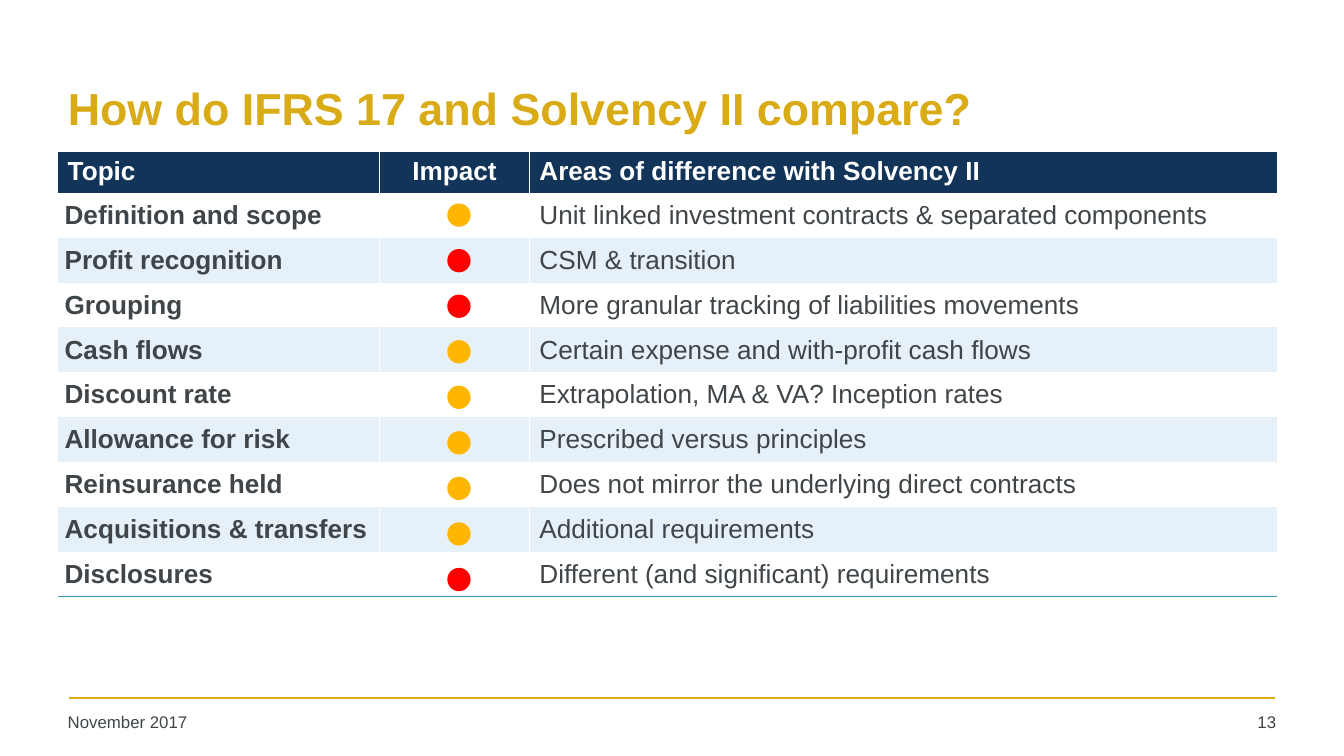
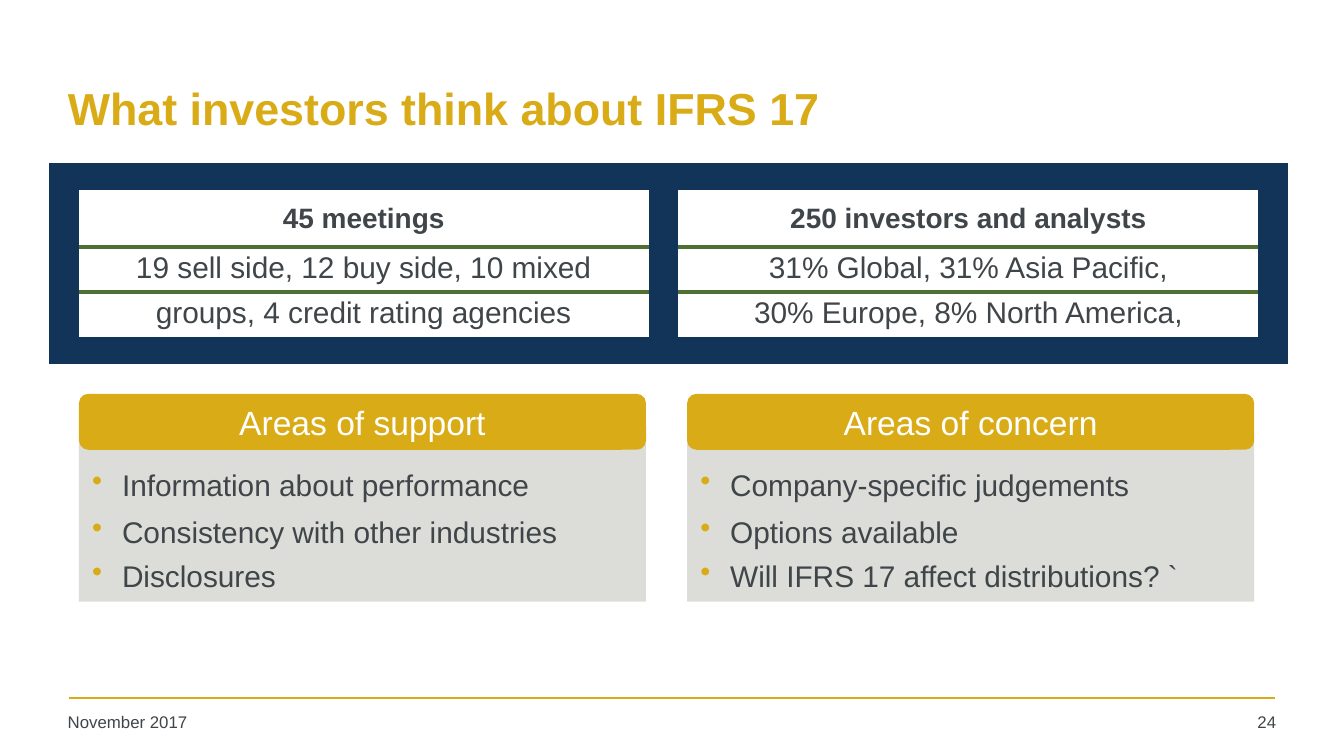
"""Build two slides on IFRS 17: a comparison with Solvency II and investor views."""
from dataclasses import dataclass

from lxml.etree import SubElement
from pptx import Presentation
from pptx.dml.color import RGBColor
from pptx.enum.shapes import MSO_CONNECTOR as Connector, MSO_SHAPE as Preset
from pptx.enum.text import MSO_ANCHOR as Anchor, MSO_AUTO_SIZE as AutoSize, PP_ALIGN as Align
from pptx.oxml.ns import qn
from pptx.util import Pt


@dataclass(frozen=True)
class Theme:
    font: str = "Arial"
    gold: RGBColor = RGBColor(0xD9, 0xAB, 0x16)
    navy: RGBColor = RGBColor(0x11, 0x34, 0x58)
    ink: RGBColor = RGBColor(0x3F, 0x45, 0x48)
    white: RGBColor = RGBColor(0xFF, 0xFF, 0xFF)
    pale: RGBColor = RGBColor(0xE5, 0xF0, 0xF9)
    grey: RGBColor = RGBColor(0xDC, 0xDD, 0xD9)
    blue: RGBColor = RGBColor(0x40, 0x96, 0xB8)
    green: RGBColor = RGBColor(0x4F, 0x70, 0x33)
    amber: RGBColor = RGBColor(0xFF, 0xB6, 0x00)
    red: RGBColor = RGBColor(0xFF, 0x00, 0x00)
    title: float = 24
    heading: float = 18
    body: float = 16
    figure: float = 15
    table: float = 14
    footer: float = 9
    tiny: float = 6


theme = Theme()
NO_TABLE_STYLE = "{2D5ABB26-0587-4C30-8999-92F81FD0307C}"


def write(holder, text, size=theme.body, color=theme.ink, bold=False, align=Align.LEFT,
          anchor=Anchor.TOP, margins=(5.3, 2.65, 5.3, 2.65), gaps=(0,), bullet=None):
    """Write the lines of text into a text frame or table cell."""
    holder.margin_left, holder.margin_top, holder.margin_right, holder.margin_bottom = map(Pt, margins)
    holder.vertical_anchor = anchor
    frame = getattr(holder, "text_frame", holder)
    frame.word_wrap = True
    for index, line in enumerate(text.split("\n")):
        para = frame.add_paragraph() if index else frame.paragraphs[0]
        para.alignment = align
        para.space_before = Pt(gaps[index])
        if not line:
            SubElement(para._p, qn("a:endParaRPr"), sz=str(int(size * 100)))
            continue
        if bullet:
            properties = para._p.get_or_add_pPr()
            properties.set("marL", str(Pt(16)))
            properties.set("indent", str(Pt(-16)))
            bullet_color = SubElement(properties, qn("a:buClr"))
            SubElement(bullet_color, qn("a:srgbClr"), val=str(theme.gold))
            SubElement(properties, qn("a:buChar"), char=bullet)
        span = para.add_run()
        span.text = line
        span.font.name, span.font.size, span.font.bold = theme.font, Pt(size), bold
        span.font.color.rgb = color


def paint_cell(cell, fill, borders):
    """Draw borders given as (side, color, width), then fill the cell."""
    properties = cell._tc.get_or_add_tcPr()
    for side, color, width in borders:
        line = SubElement(properties, qn(f"a:ln{side}"), w=str(Pt(width)))
        SubElement(SubElement(line, qn("a:solidFill")), qn("a:srgbClr"), val=str(color))
    cell.fill.solid()
    cell.fill.fore_color.rgb = fill


deck = Presentation()
deck.slide_width, deck.slide_height = Pt(720), Pt(405)
pages = []
for title, number in (("How do IFRS 17 and Solvency II compare?", "13"),
                      ("What investors think about IFRS 17", "24")):
    page = deck.slides.add_slide(deck.slide_layouts[5])
    heading = page.shapes.title
    heading.left, heading.top, heading.width, heading.height = Pt(31), Pt(24), Pt(653), Pt(67.5)
    heading.text_frame.auto_size = AutoSize.NONE
    write(heading.text_frame, title, size=theme.title, color=theme.gold, bold=True, anchor=Anchor.MIDDLE)
    rule = page.shapes.add_connector(Connector.STRAIGHT, Pt(36.8), Pt(373.8), Pt(683.2), Pt(373.8))
    rule.line.color.rgb, rule.line.width = theme.gold, Pt(1)
    SubElement(rule._element.spPr, qn("a:effectLst"))
    for left, width, text, align in ((31, 158, "November 2017", Align.LEFT),
                                     (637.9, 51, number, Align.RIGHT)):
        box = page.shapes.add_textbox(Pt(left), Pt(378.5), Pt(width), Pt(20))
        write(box.text_frame, text, size=theme.footer, align=align)
    pages.append(page)
comparison, investors = pages

topics = (
    ("Definition and scope", theme.amber, "Unit linked investment contracts & separated components"),
    ("Profit recognition", theme.red, "CSM & transition"),
    ("Grouping", theme.red, "More granular tracking of liabilities movements"),
    ("Cash flows", theme.amber, "Certain expense and with-profit cash flows"),
    ("Discount rate", theme.amber, "Extrapolation, MA & VA? Inception rates"),
    ("Allowance for risk", theme.amber, "Prescribed versus principles"),
    ("Reinsurance held", theme.amber, "Does not mirror the underlying direct contracts"),
    ("Acquisitions & transfers", theme.amber, "Additional requirements"),
    ("Disclosures", theme.red, "Different (and significant) requirements"),
)
graphic = comparison.shapes.add_table(len(topics) + 1, 3, Pt(31), Pt(81.2), Pt(653), Pt(232.6))
table = graphic.table
graphic._element.find(".//" + qn("a:tableStyleId")).text = NO_TABLE_STYLE
for column, width in zip(table.columns, (172.3, 80.4, 400.3)):
    column.width = Pt(width)
rows = [("Topic", "Impact", "Areas of difference with Solvency II")]
rows += [(topic, "", difference) for topic, impact, difference in topics]
for row, texts in enumerate(rows):
    table.rows[row].height = Pt(23.45 if row else 21.5)
    fill = (theme.pale if row % 2 == 0 else theme.white) if row else theme.navy
    for column, text in enumerate(texts):
        cell = table.cell(row, column)
        write(cell, text, size=theme.table, color=theme.ink if row else theme.white,
              bold=row == 0 or column == 0, align=Align.CENTER if column == 1 else Align.LEFT,
              anchor=Anchor.MIDDLE if row else Anchor.TOP,
              margins=(3.6,) * 4 if row and column == 0 else (5.3, 2.65, 5.3, 2.65))
        borders = [("L", theme.white, 1)] if column else []
        if column < 2:
            borders.append(("R", theme.white, 1))
        if row == len(topics):
            borders.append(("B", theme.blue, 1))
        paint_cell(cell, fill, borders)
for index, (topic, impact, difference) in enumerate(topics):
    dot = comparison.shapes.add_shape(Preset.OVAL, Pt(239.6), Pt(109 + 24.4 * index), Pt(12.5), Pt(12.5))
    dot.shadow.inherit = False
    dot.fill.solid()
    dot.fill.fore_color.rgb = impact
    dot.line.fill.background()

areas = (
    ("Areas of support", "Information about performance\nConsistency with other industries\nDisclosures"),
    ("Areas of concern", "Company-specific judgements\nOptions available\nWill IFRS 17 affect distributions? `"),
)
for index, (name, points) in enumerate(areas):
    left = Pt(42.3 + 325.8 * index)
    panel = investors.shapes.add_shape(Preset.RECTANGLE, left, Pt(235.3), Pt(303.8), Pt(87))
    banner = investors.shapes.add_shape(Preset.ROUNDED_RECTANGLE, left, Pt(211), Pt(303.8), Pt(30))
    for shape, color in ((panel, theme.grey), (banner, theme.gold)):
        shape.shadow.inherit = False
        shape.fill.solid()
        shape.fill.fore_color.rgb = color
        shape.line.fill.background()
    write(panel.text_frame, points, margins=(7.2, 14.6, 7.2, 3.6), gaps=(0, 6, 4.5), bullet="•")
    write(banner.text_frame, name, size=theme.heading, color=theme.white,
          align=Align.CENTER, anchor=Anchor.MIDDLE)

meetings = {
    (1, 1): "45 meetings",
    (1, 3): "250 investors and analysts",
    (2, 1): "19 sell side, 12 buy side, 10 mixed",
    (2, 3): "31% Global, 31% Asia Pacific,",
    (3, 1): "groups, 4 credit rating agencies",
    (3, 3): "30% Europe, 8% North America,",
}
graphic = investors.shapes.add_table(5, 5, Pt(26.2), Pt(87.5), Pt(664), Pt(106))
table = graphic.table
graphic._element.find(".//" + qn("a:tableStyleId")).text = NO_TABLE_STYLE
for column, width in zip(table.columns, (16, 305.3, 16, 310.7, 16)):
    column.width = Pt(width)
for row, height in enumerate((14.4, 30.4, 23.4, 23.4, 14.4)):
    table.rows[row].height = Pt(height)
    for column in range(5):
        cell = table.cell(row, column)
        text = meetings.get((row, column), "")
        size = (theme.figure if row == 1 else theme.body) if text else theme.tiny
        write(cell, text, size=size, bold=row == 1, align=Align.CENTER,
              anchor=Anchor.MIDDLE if row == 1 else Anchor.TOP, margins=(6.5, 2.5, 6.5, 2.5))
        side = {1: "B", 2: "T"}.get(row)
        borders = [(side, theme.green, 2.25)] if text and side else []
        paint_cell(cell, theme.white if text else theme.navy, borders)

deck.save("out.pptx")
